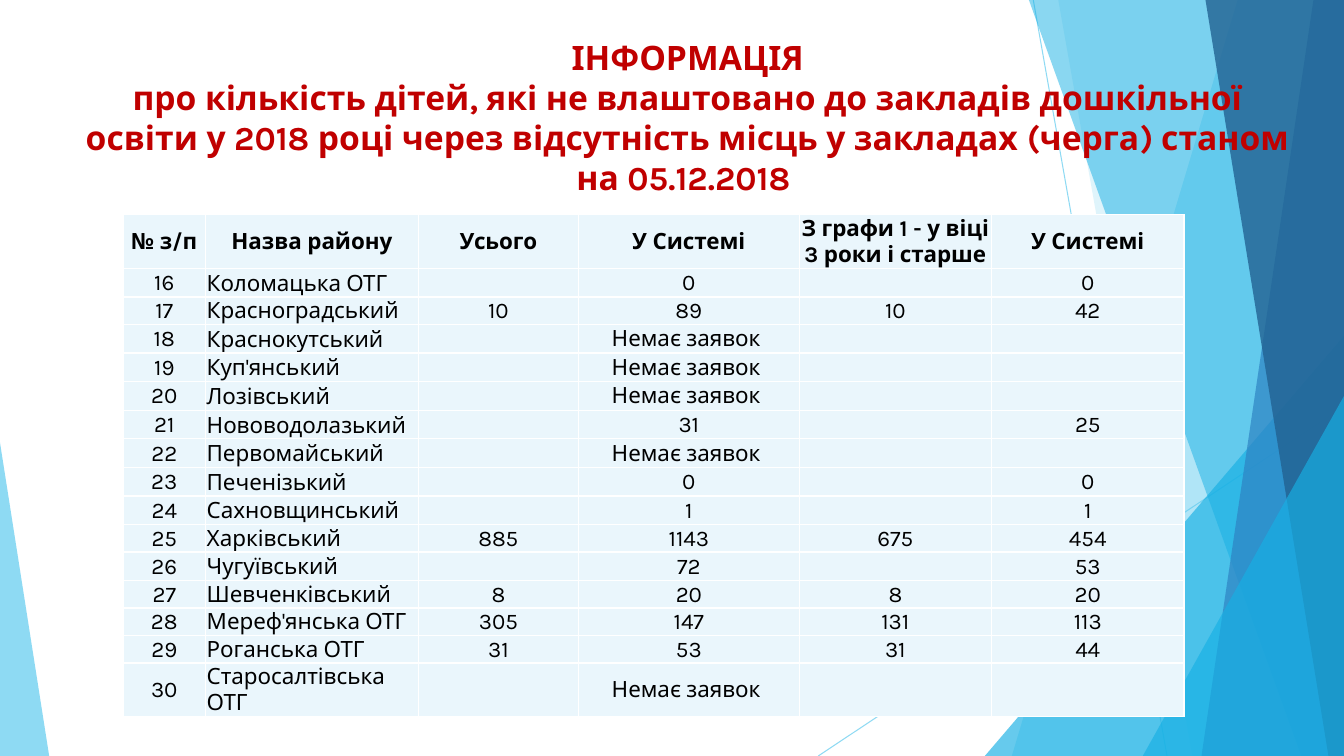
from lxml.etree import SubElement
from pptx import Presentation
from pptx.dml.color import RGBColor
from pptx.enum.shapes import MSO_CONNECTOR as CONN, MSO_SHAPE as SHAPE
from pptx.enum.text import MSO_ANCHOR as ANCHOR, MSO_AUTO_SIZE as AUTO, PP_ALIGN as ALIGN
from pptx.oxml.ns import qn
from pptx.util import Cm, Pt

W, H = 33.87, 19.05
NO_REQUESTS = "Немає заявок "
HEADER = ["№ з/п", "Назва району", "Усього", "У Системі",
          "З графи 1 - у віці 3 роки і старше", "У Системі"]
FIRST_NUMBER = 16
DISTRICTS = [
    ("Коломацька ОТГ", "", "0", "", "0"),
    ("Красноградський", "10", "89", "10", "42"),
    ("Краснокутський", "", NO_REQUESTS, "", ""),
    ("Куп'янський", "", NO_REQUESTS, "", ""),
    ("Лозівський", "", NO_REQUESTS, "", ""),
    ("Нововодолазький", "", "31", "", "25"),
    ("Первомайський", "", NO_REQUESTS, "", ""),
    ("Печенізький", "", "0", "", "0"),
    ("Сахновщинський", "", "1", "", "1"),
    ("Харківський", "885", "1143", "675", "454"),
    ("Чугуївський", "", "72", "", "53"),
    ("Шевченківський", "8", "20", "8", "20"),
    ("Мереф'янська ОТГ", "305", "147", "131", "113"),
    ("Роганська ОТГ", "31", "53", "31", "44"),
    ("Старосалтівська ОТГ", "", NO_REQUESTS, "", ""),
]


def paint(fill, color, alpha=100):
    """Fill with a solid hex colour at the given opacity in percent."""
    fill.solid()
    fill.fore_color.rgb = RGBColor.from_string(color)
    if alpha < 100:
        clr = fill._xPr.find(".//" + qn("a:srgbClr"))
        SubElement(clr, qn("a:alpha"), val=str(alpha * 1000))


def write(tf, text, size, color="000000", bold=False, align=ALIGN.CENTER, font="Karla"):
    p = tf.paragraphs[0]
    p.text = text
    p.alignment = align
    for r in p.runs:
        r.font.name, r.font.size, r.font.bold = font, Pt(size), bold
        paint(r.font.fill, color)
    for br in p._p.findall(qn("a:br")):
        SubElement(br, qn("a:rPr"), sz=str(size * 100))
    if not text:
        SubElement(p._p, qn("a:endParaRPr"), sz=str(size * 100))


class Slide:
    cell_fill, border, title_color = "EAF6FC", "FFFFFF", "C00000"

    def __init__(self, prs):
        self.s = prs.slides.add_slide(prs.slide_layouts[5])

    def finish(self, sp, color, alpha):
        paint(sp.fill, color, alpha)
        sp.line.fill.background()
        sp.shadow.inherit = False

    def line(self, x1, y1, x2, y2, color="5FCBEF", alpha=70):
        cn = self.s.shapes.add_connector(CONN.STRAIGHT, Cm(x1), Cm(y1), Cm(x2), Cm(y2))
        cn.line.width = Pt(0.75)
        paint(cn.line.fill, color, alpha)
        SubElement(cn._element.spPr, qn("a:effectLst"))

    def band(self, top_x, bottom_x, color, alpha):
        """Full-height band from a slanted left edge to the slide's right edge."""
        fb = self.s.shapes.build_freeform(Cm(top_x), 0)
        fb.add_line_segments([(Cm(W), 0), (Cm(W), Cm(H)), (Cm(bottom_x), Cm(H))])
        self.finish(fb.convert_to_shape(), color, alpha)

    def triangle(self, x, y, w, apex, color, alpha):
        """Triangle standing on the bottom edge, apex at 0 (left) to 1 (right)."""
        sp = self.s.shapes.add_shape(SHAPE.ISOSCELES_TRIANGLE, Cm(x), Cm(y), Cm(w), Cm(H - y))
        sp.adjustments[0] = apex
        self.finish(sp, color, alpha)

    def title(self, text, x, y, w, h):
        sp = self.s.shapes.title
        sp.left, sp.top, sp.width, sp.height = Cm(x), Cm(y), Cm(w), Cm(h)
        tf = sp.text_frame
        tf.word_wrap, tf.auto_size, tf.vertical_anchor = True, AUTO.NONE, ANCHOR.TOP
        write(tf, text, 24, self.title_color, bold=True)
        self.s.shapes._spTree.append(sp._element)  # in front of the bands

    def cell(self, c, text, bold, is_name):
        c.margin_left = c.margin_right = c.margin_top = Cm(0.03)
        c.margin_bottom = 0
        c.vertical_anchor = ANCHOR.BOTTOM if is_name else ANCHOR.MIDDLE
        write(c.text_frame, text, 16, bold=bold, align=ALIGN.LEFT if is_name else ALIGN.CENTER)
        tcPr = c._tc.get_or_add_tcPr()
        for side in "LRTB":
            ln = SubElement(tcPr, qn(f"a:ln{side}"), w=str(Pt(1)))
            SubElement(SubElement(ln, qn("a:solidFill")), qn("a:srgbClr"), val=self.border)
        paint(c.fill, self.cell_fill)

    def table(self, rows, x, y, widths, heights):
        tbl = self.s.shapes.add_table(len(rows), len(widths), Cm(x), Cm(y),
                                      Cm(sum(widths)), Cm(sum(heights))).table
        tbl.first_row = tbl.horz_banding = False
        for col, w in zip(tbl.columns, widths):
            col.width = Cm(w)
        for i, (row, h, texts) in enumerate(zip(tbl.rows, heights, rows)):
            row.height = Cm(h)
            for j, (c, text) in enumerate(zip(row.cells, texts)):
                self.cell(c, text, bold=i == 0, is_name=i > 0 and j == 1)


def main():
    prs = Presentation()
    prs.slide_width, prs.slide_height = Cm(W), Cm(H)
    s = Slide(prs)

    s.line(26.04, 0, 29.41, H)
    s.line(W, 10.24, 20.62, H)
    s.band(31.19, 25.5, "5FCBEF", 36)
    s.band(26.67, 30.05, "5FCBEF", 20)
    s.triangle(24.82, 8.46, 9.05, 1, "17B0E4", 66)
    s.band(25.93, 32.79, "17B0E4", 50)
    s.band(33.1, 30.28, "2E83C3", 70)
    s.band(30.38, 33.48, "226292", 80)
    s.triangle(28.8, 9.98, 5.07, 1, "17B0E4", 66)
    s.triangle(0, 11.15, 1.24, 0, "5FCBEF", 70)

    s.title("ІНФОРМАЦІЯ\vпро кількість дітей, які не влаштовано до закладів дошкільної "
            "освіти у 2018 році через відсутність місць у закладах (черга) "
            "станом на 05.12.2018 ", 1.57, 0.79, 31.52, 3.66)

    rows = [HEADER] + [(str(n), *d) for n, d in enumerate(DISTRICTS, FIRST_NUMBER)]
    tall, low = 1.34, 0.69
    s.table(rows, 3.1, 5.41, [2.08, 5.36, 4.04, 5.56, 4.85, 4.85],
            [tall] + [low] * (len(DISTRICTS) - 1) + [tall])
    prs.save("out.pptx")


if __name__ == "__main__":
    main()
